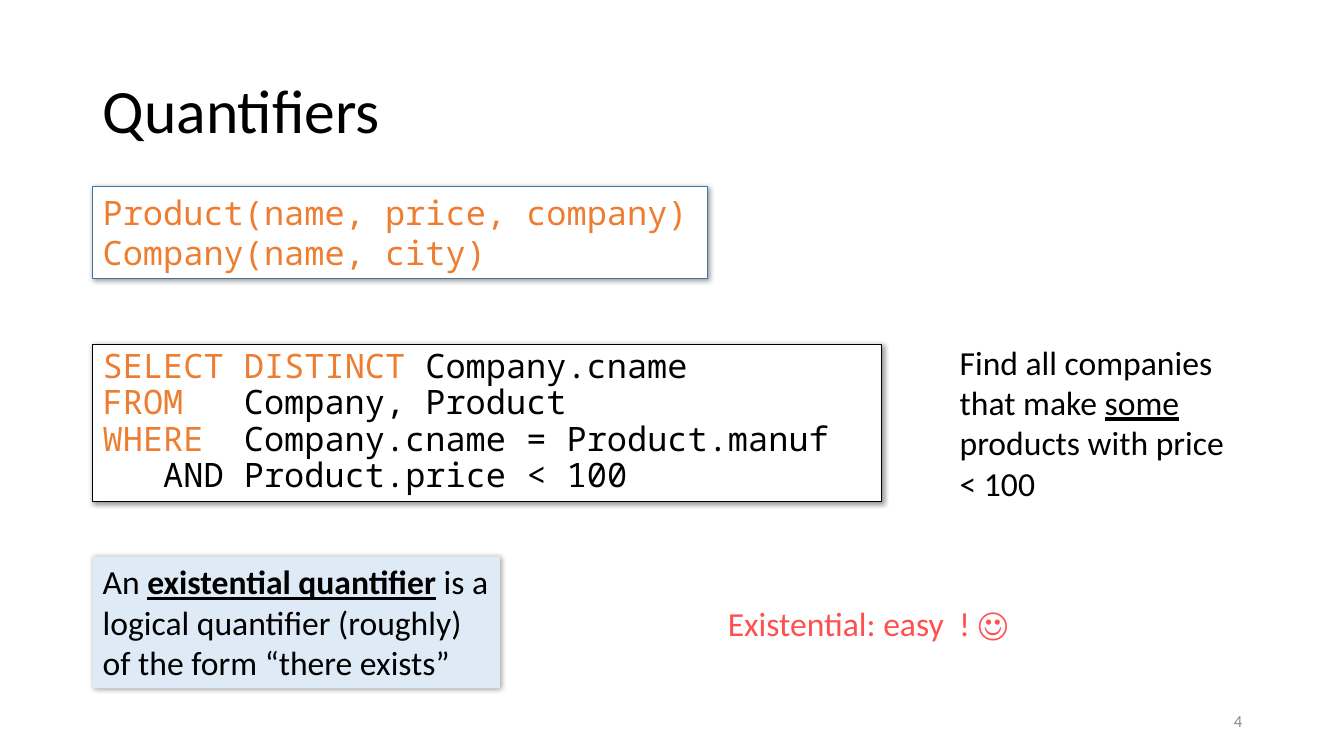
from dataclasses import dataclass

from lxml import etree
from pptx import Presentation
from pptx.dml.color import RGBColor
from pptx.enum.shapes import MSO_SHAPE
from pptx.enum.text import MSO_ANCHOR, MSO_AUTO_SIZE, PP_ALIGN
from pptx.oxml.ns import qn
from pptx.util import Inches, Pt

RECT = MSO_SHAPE.RECTANGLE
TOP, MIDDLE = MSO_ANCHOR.TOP, MSO_ANCHOR.MIDDLE
LEFT, RIGHT = PP_ALIGN.LEFT, PP_ALIGN.RIGHT
FIT, NO_FIT = MSO_AUTO_SIZE.SHAPE_TO_FIT_TEXT, MSO_AUTO_SIZE.NONE
TITLE_ONLY = 5


@dataclass(frozen=True)
class Theme:
    font: str = "Calibri"
    code_font: str = "Noto Sans Mono"
    title_size: int = 44
    body_size: int = 24
    number_size: int = 12
    black: str = "000000"
    white: str = "FFFFFF"
    orange: str = "ED7D31"
    blue: str = "43739E"
    pale_blue: str = "DEEBF7"
    red: str = "FF5050"
    gray: str = "8C8C8C"


THEME = Theme()


@dataclass(frozen=True)
class Span:
    text: str
    color: str | None = None
    bold: bool | None = None
    underline: bool | None = None


@dataclass(frozen=True)
class Block:
    box: tuple[float, float, float, float]
    lines: list[list[Span]]
    color: str = THEME.black
    font: str = THEME.font
    size: int = THEME.body_size
    spacing: float = 1.0
    align: PP_ALIGN = LEFT
    anchor: MSO_ANCHOR = TOP
    wrap: bool = True
    auto_size: MSO_AUTO_SIZE = FIT
    fill: str | None = None
    line: str | None = None


def rgb(color: str) -> RGBColor:
    return RGBColor.from_string(color)


def add_shadow(sp) -> None:
    sp.shadow.inherit = False
    effects = sp._element.spPr.find(qn("a:effectLst"))
    shadow = etree.SubElement(effects, qn("a:outerShdw"), blurRad=str(Pt(4)),
                              dist=str(Pt(1)), dir="2700000", algn="tl", rotWithShape="0")
    black = etree.SubElement(shadow, qn("a:srgbClr"), val=THEME.black)
    etree.SubElement(black, qn("a:alpha"), val="40000")


def write_text(sp, block: Block) -> None:
    tf = sp.text_frame
    tf.word_wrap, tf.auto_size = block.wrap, block.auto_size
    tf.vertical_anchor = block.anchor
    for i, spans in enumerate(block.lines):
        p = tf.add_paragraph() if i else tf.paragraphs[0]
        p.alignment, p.line_spacing = block.align, block.spacing
        p.font.name, p.font.size = block.font, Pt(block.size)
        p.font.color.rgb = rgb(block.color)
        for span in spans:
            r = p.add_run()
            r.text = span.text
            r.font.bold, r.font.underline = span.bold, span.underline
            if span.color:
                r.font.color.rgb = rgb(span.color)


def add_block(s, block: Block) -> None:
    box = [Inches(v) for v in block.box]
    if block.fill:
        sp = s.shapes.add_shape(RECT, *box)
        sp.fill.solid()
        sp.fill.fore_color.rgb = rgb(block.fill)
        if block.line:
            sp.line.color.rgb = rgb(block.line)
            sp.line.width = Pt(0.75)
        else:
            sp.line.fill.background()
        add_shadow(sp)
    else:
        sp = s.shapes.add_textbox(*box)
    write_text(sp, block)


def keyword(text: str) -> Span:
    return Span(text, color=THEME.orange)


MARGIN, NOTE_LEFT, NOTE_WIDTH = 0.92, 9.42, 3

TITLE = Block((MARGIN, 0.4, 11.5, 1.45), [[Span("Quantifiers")]], size=THEME.title_size,
              spacing=0.9, anchor=MIDDLE, auto_size=NO_FIT)

BLOCKS = [
    # Slide number
    Block((NOTE_LEFT, 6.95, NOTE_WIDTH, 0.4), [[Span("4")]], color=THEME.gray,
          size=THEME.number_size, align=RIGHT, anchor=MIDDLE, auto_size=NO_FIT),
    # Schema
    Block((MARGIN, 1.85, 6.1, 0.91),
          [[Span("Product(name, price, company)")], [Span("Company(name, city)")]],
          color=THEME.orange, font=THEME.code_font, wrap=False,
          fill=THEME.white, line=THEME.blue),
    # Question in words
    Block((NOTE_LEFT, 3.34, NOTE_WIDTH, 1.72),
          [[Span("Find all companies that make "), Span("some", underline=True),
            Span(" products with price < 100")]]),
    # Query
    Block((MARGIN, 3.42, 7.82, 1.56),
          [[keyword("SELECT DISTINCT "), Span("Company.cname")],
           [keyword("FROM   "), Span("Company, Product")],
           [keyword("WHERE  "), Span("Company.cname = Product.manuf")],
           [Span("   AND Product.price < 100")]],
          font=THEME.code_font, spacing=0.9, fill=THEME.white, line=THEME.black),
    # Verdict
    Block((7.12, 5.93, NOTE_WIDTH, 0.5), [[Span("Existential: easy  ! ☺")]],
          color=THEME.red, wrap=False),
    # Definition
    Block((MARGIN, 5.52, 4.04, 1.31),
          [[Span("An "), Span("existential quantifier", bold=True, underline=True),
            Span(" is a logical quantifier (roughly) of the form “there exists”")]],
          fill=THEME.pale_blue),
]


def main() -> None:
    prs = Presentation()
    prs.slide_width, prs.slide_height = Inches(13.33), Inches(7.5)
    s = prs.slides.add_slide(prs.slide_layouts[TITLE_ONLY])

    # Title
    title = s.shapes.title
    title.left, title.top, title.width, title.height = (Inches(v) for v in TITLE.box)
    write_text(title, TITLE)

    for block in BLOCKS:
        add_block(s, block)
    prs.save("out.pptx")


if __name__ == "__main__":
    main()
